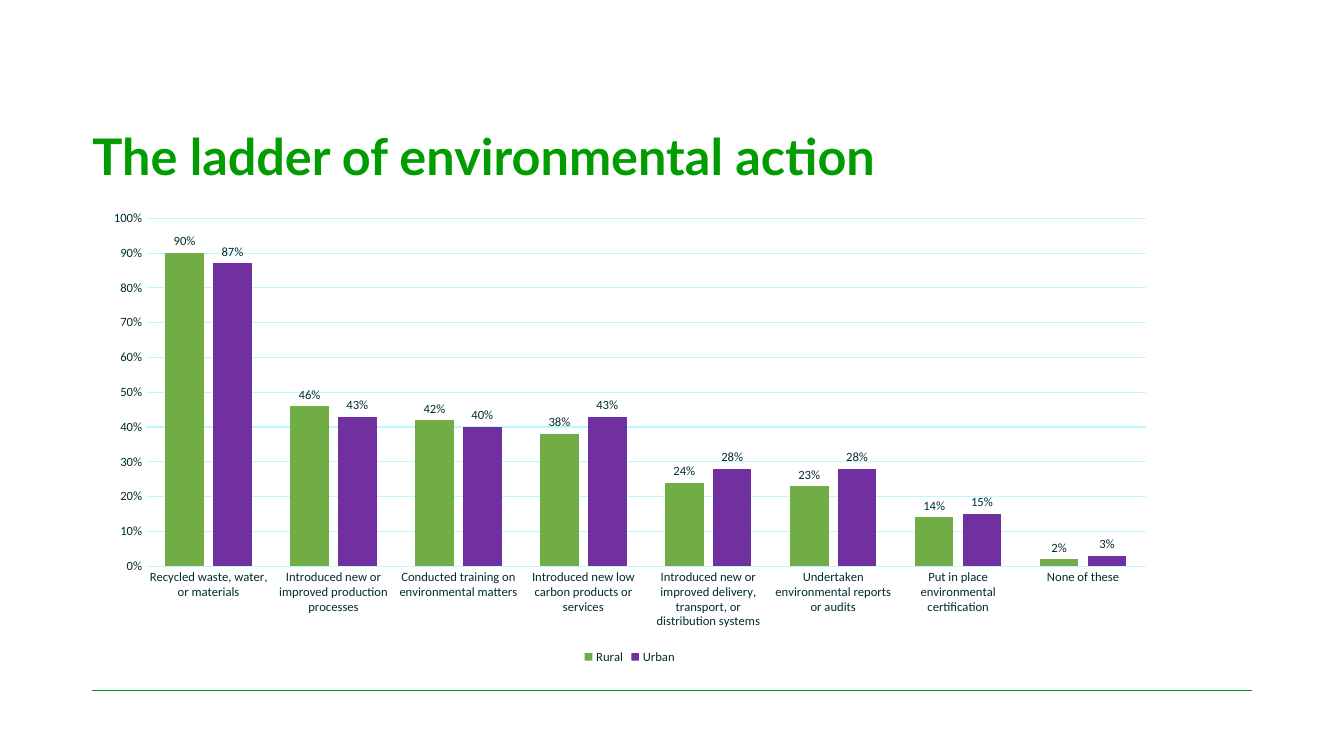
from dataclasses import dataclass

from lxml import etree
from pptx import Presentation
from pptx.chart.data import CategoryChartData
from pptx.dml.color import RGBColor
from pptx.enum.chart import XL_CHART_TYPE, XL_LABEL_POSITION, XL_LEGEND_POSITION, XL_TICK_MARK
from pptx.enum.shapes import MSO_CONNECTOR
from pptx.enum.text import MSO_ANCHOR
from pptx.oxml.ns import qn
from pptx.util import Cm, Pt

COLUMNS = XL_CHART_TYPE.COLUMN_CLUSTERED
OUTSIDE_END = XL_LABEL_POSITION.OUTSIDE_END
LEGEND_BOTTOM = XL_LEGEND_POSITION.BOTTOM
NO_TICK = XL_TICK_MARK.NONE
STRAIGHT = MSO_CONNECTOR.STRAIGHT
BOTTOM = MSO_ANCHOR.BOTTOM

COLORS = {
    "title": "009C00",
    "chart_text": "002C30",
    "grid": "BAF9FF",
    "rural": "70AD47",
    "urban": "7030A0",
}
LEFT, WIDTH = 2.33, 29.21
PERCENT = "0%"


@dataclass(frozen=True)
class Series:
    name: str
    color: str
    values: tuple[float, ...]


CATEGORIES = (
    "Recycled waste, water, or materials",
    "Introduced new or improved production processes",
    "Conducted training on environmental matters",
    "Introduced new low carbon products or services",
    "Introduced new or improved delivery, transport, or distribution systems",
    "Undertaken environmental reports or audits",
    "Put in place environmental certification",
    "None of these",
)
SERIES = (
    Series("Rural", "rural", (0.9, 0.46, 0.42, 0.38, 0.24, 0.23, 0.14, 0.02)),
    Series("Urban", "urban", (0.87, 0.43, 0.4, 0.43, 0.28, 0.28, 0.15, 0.03)),
)


def rgb(name: str) -> RGBColor:
    return RGBColor.from_string(COLORS[name])


def set_font(font, *, name: str, size: float, color: str, bold: bool = False) -> None:
    font.name = name
    font.size = Pt(size)
    font.bold = bold
    font.color.rgb = rgb(color)


def set_line(line, color: str, width: float) -> None:
    line.color.rgb = rgb(color)
    line.width = Pt(width)


def add_text(slide, text: str, left: float, top: float, width: float, height: float,
             *, anchor=BOTTOM, line_spacing: float = 1.0, **font_format) -> None:
    sp = slide.shapes.add_textbox(Cm(left), Cm(top), Cm(width), Cm(height))
    tf = sp.text_frame
    tf.word_wrap = True
    tf.vertical_anchor = anchor
    tf.margin_left = tf.margin_top = tf.margin_right = tf.margin_bottom = 0
    p = tf.paragraphs[0]
    p.line_spacing = line_spacing
    r = p.add_run()
    r.text = text
    set_font(r.font, **font_format)


def add_rule(slide, left: float, top: float, width: float, color: str) -> None:
    """Draw a horizontal line without a shadow."""
    line = slide.shapes.add_connector(STRAIGHT, Cm(left), Cm(top), Cm(left + width), Cm(top))
    set_line(line.line, color, 1)
    etree.SubElement(line._element.spPr, qn("a:effectLst"))


def style_axes(chart) -> None:
    for axis in (chart.category_axis, chart.value_axis):
        axis.major_tick_mark = axis.minor_tick_mark = NO_TICK
    set_line(chart.category_axis.format.line, "grid", 0.75)

    value_axis = chart.value_axis
    value_axis.minimum_scale, value_axis.maximum_scale = 0, 1
    value_axis.major_unit = 0.1
    value_axis.format.line.fill.background()
    value_axis.has_major_gridlines = True
    set_line(value_axis.major_gridlines.format.line, "grid", 0.75)
    value_axis.tick_labels.number_format = PERCENT
    value_axis.tick_labels.number_format_is_linked = False


def style_bars(plot) -> None:
    plot.gap_width = 100
    plot.overlap = -24
    plot.vary_by_categories = False
    for bars, series in zip(plot.series, SERIES):
        bars.format.fill.solid()
        bars.format.fill.fore_color.rgb = rgb(series.color)
        bars.invert_if_negative = False
        labels = bars.data_labels
        labels.show_value = True
        labels.position = OUTSIDE_END
        labels.number_format = PERCENT
        labels.number_format_is_linked = False
        set_font(labels.font, name="Calibri", size=9, color="chart_text")


def add_action_chart(slide, left: float, top: float, width: float, height: float) -> None:
    data = CategoryChartData(number_format=PERCENT)
    data.categories = CATEGORIES
    for series in SERIES:
        data.add_series(series.name, series.values)
    chart = slide.shapes.add_chart(
        COLUMNS, Cm(left), Cm(top), Cm(width), Cm(height), data).chart
    chart.has_title = False
    chart.has_legend = True
    chart.legend.position = LEGEND_BOTTOM
    chart.legend.include_in_layout = False
    style_axes(chart)
    style_bars(chart.plots[0])
    for part in (chart, chart.legend, chart.category_axis.tick_labels,
                 chart.value_axis.tick_labels):
        set_font(part.font, name="Calibri", size=9, color="chart_text")


def main() -> None:
    prs = Presentation()
    prs.slide_width, prs.slide_height = Cm(33.87), Cm(19.05)
    slide = prs.slides.add_slide(prs.slide_layouts[6])
    add_rule(slide, LEFT, 17.4, WIDTH, "title")
    add_text(slide, "The ladder of environmental action", LEFT, 1.83, WIDTH, 2.87,
             line_spacing=0.9, name="Lato", size=36, color="title", bold=True)
    add_action_chart(slide, LEFT, 5.08, 27.08, 11.76)
    prs.save("out.pptx")


if __name__ == "__main__":
    main()
